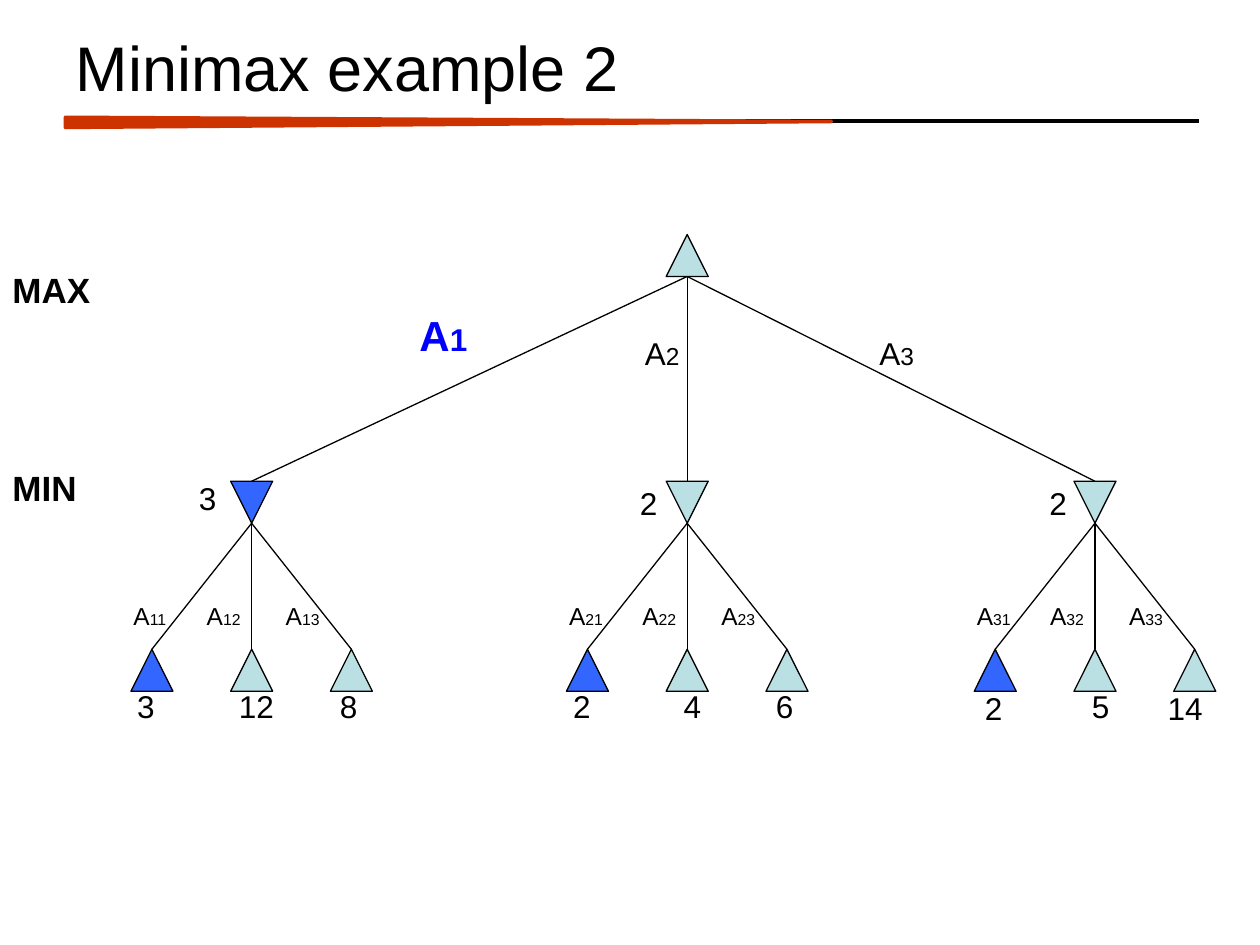
"""Build the slide with a two-level minimax game tree."""
from dataclasses import dataclass

from lxml.etree import SubElement
from pptx import Presentation
from pptx.dml.color import RGBColor
from pptx.enum.shapes import MSO_CONNECTOR, MSO_SHAPE
from pptx.enum.text import MSO_ANCHOR, MSO_AUTO_SIZE, PP_ALIGN
from pptx.oxml.ns import qn
from pptx.util import Pt

COLORS = {"ink": "000000", "node": "BBE0E3", "chosen": "3366FF",
          "action": "0000FF", "wedge": "CC3300"}
SIDE = 24
ROOT_X, ROOT_Y = 392.7, 134
MIN_Y, LEAF_Y = 275, 371
LEAF_DX = (-57, 0, 57)
LABEL_DX = (-74.6, -32.9, 12.4)
ALIGNS = (PP_ALIGN.LEFT, PP_ALIGN.CENTER, PP_ALIGN.LEFT)


@dataclass
class Branch:
    x: float
    value: str
    value_left: float
    value_top: float
    leaves: tuple[str, str, str]
    leaf_lefts: tuple[float, float, float]
    leaf_tops: tuple[float, float, float]
    chosen: bool = False


@dataclass
class Action:
    index: str
    left: float
    top: float
    width: float
    size: float = 18
    index_size: float = 14
    color: str = "ink"
    bold: bool = False


BRANCHES = (
    Branch(143.8, "3", 106.6, 270, ("3", "12", "8"),
           (71.3, 127.4, 187.2), (388.8, 388.8, 388.8), chosen=True),
    Branch(ROOT_X, "2", 358.6, 272.9, ("2", "4", "6"),
           (320.4, 382.3, 436.3), (388.8, 388.8, 388.8)),
    Branch(625.7, "2", 592.6, 272.9, ("2", "5", "14"),
           (555.8, 615.6, 660.2), (390.2, 388.8, 390.2)),
)
ACTIONS = (
    Action("1", 232.6, 173.5, 42.5, 24, 18, "action", True),
    Action("2", 361.4, 187.2, 34.6),
    Action("3", 495.4, 187.2, 34.6),
)


def rgb(name: str) -> RGBColor:
    return RGBColor.from_string(COLORS[name])


def put_text(sp, text: str, *, size: float, index: str = "", index_size: float = 9,
             bold: bool = False, color: str = "ink", align=PP_ALIGN.LEFT,
             wrap: bool = False) -> None:
    tf = sp.text_frame
    tf.word_wrap = wrap
    p = tf.paragraphs[0]
    p.alignment = align
    for part, part_size in ((text, size), (index, index_size)):
        if part:
            r = p.add_run()
            r.text = part
            r.font.name = "Arial"
            r.font.size = Pt(part_size)
            r.font.bold = bold
            r.font.color.rgb = rgb(color)


def add_text(shapes, text: str, left: float, top: float, width: float,
             height: float, **fmt) -> None:
    sp = shapes.add_textbox(Pt(left), Pt(top), Pt(width), Pt(height))
    put_text(sp, text, **fmt)


def add_triangle(shapes, left: float, top: float, width: float, height: float,
                 fill: str, line: str = "ink", weight: float = 0.75):
    sp = shapes.add_shape(MSO_SHAPE.ISOSCELES_TRIANGLE,
                          Pt(left), Pt(top), Pt(width), Pt(height))
    sp.shadow.inherit = False
    sp.fill.solid()
    sp.fill.fore_color.rgb = rgb(fill)
    sp.line.color.rgb = rgb(line)
    sp.line.width = Pt(weight)
    return sp


def add_node(shapes, x: float, top: float, chosen: bool = False, down: bool = False) -> None:
    sp = add_triangle(shapes, x - SIDE / 2, top, SIDE, SIDE, "chosen" if chosen else "node")
    if down:
        sp._element.spPr.xfrm.set("flipV", "1")


def add_line(shapes, x1: float, y1: float, x2: float, y2: float, weight: float = 0.75) -> None:
    cn = shapes.add_connector(MSO_CONNECTOR.STRAIGHT, Pt(x1), Pt(y1), Pt(x2), Pt(y2))
    cn.line.color.rgb = rgb("ink")
    cn.line.width = Pt(weight)
    SubElement(cn._element.spPr, qn("a:effectLst"))


def add_header(shapes) -> None:
    add_line(shapes, 37.4, 69.1, 685.4, 69.1, 2)
    wedge = add_triangle(shapes, 253.4, -149, 5.8, 437.8, "wedge", "wedge", 2)
    wedge.rotation = 90
    wedge.adjustments[0] = 0.417
    sp = shapes.title
    sp.left, sp.top, sp.width, sp.height = Pt(36), Pt(12.2), Pt(648), Pt(51.8)
    put_text(sp, "Minimax example 2", size=36, wrap=True)
    sp.text_frame.vertical_anchor = MSO_ANCHOR.MIDDLE
    sp.text_frame.auto_size = MSO_AUTO_SIZE.NONE


def add_branch(shapes, number: int, branch: Branch) -> None:
    add_line(shapes, ROOT_X, ROOT_Y + SIDE, branch.x, MIN_Y)
    for i, dx in enumerate(LEAF_DX):
        x, value = branch.x + dx, branch.leaves[i]
        add_line(shapes, branch.x, MIN_Y + SIDE, x, LEAF_Y)
        add_node(shapes, x, LEAF_Y, chosen=i == 0)
        add_text(shapes, value, branch.leaf_lefts[i], branch.leaf_tops[i],
                 38.2 if len(value) > 1 else 26.6, 36, size=18, align=ALIGNS[i])
        add_text(shapes, "A", branch.x + LABEL_DX[i], 339.8, 33.8, 23.8,
                 size=14, index=f"{number}{i + 1}", align=ALIGNS[i])
    add_node(shapes, branch.x, MIN_Y, branch.chosen, down=True)
    add_text(shapes, branch.value, branch.value_left, branch.value_top,
             23.8, 51.1, size=18, wrap=True)


def main() -> None:
    prs = Presentation()
    prs.slide_width, prs.slide_height = Pt(720), Pt(540)
    shapes = prs.slides.add_slide(prs.slide_layouts[5]).shapes
    add_header(shapes)
    for number, branch in enumerate(BRANCHES, 1):
        add_branch(shapes, number, branch)
    add_node(shapes, ROOT_X, ROOT_Y)
    for a in ACTIONS:
        add_text(shapes, "A", a.left, a.top, a.width, 1.2 * a.size + 7.2, size=a.size,
                 index=a.index, index_size=a.index_size, color=a.color, bold=a.bold)
    for level, top in (("MAX", 149.8), ("MIN", 262.8)):
        add_text(shapes, level, 0, top, 90, 31.7, size=20, bold=True, wrap=True)
    prs.save("out.pptx")


if __name__ == "__main__":
    main()
